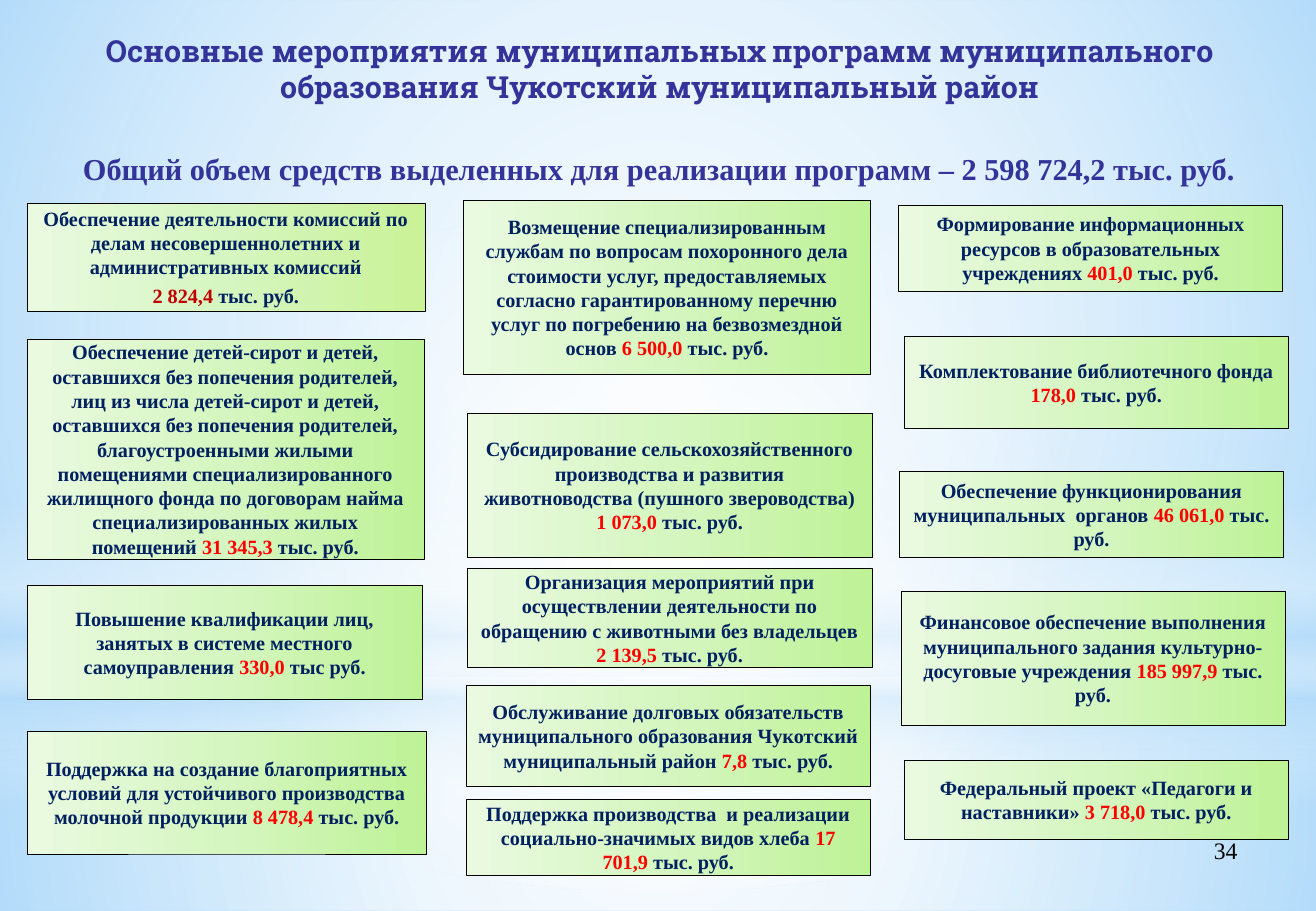
from lxml.etree import SubElement
from pptx import Presentation
from pptx.dml.color import RGBColor
from pptx.enum.shapes import MSO_SHAPE
from pptx.enum.text import MSO_ANCHOR, MSO_AUTO_SIZE, PP_ALIGN
from pptx.oxml.ns import qn
from pptx.util import Cm, Pt

WIDTH, HEIGHT = 27.53, 19.05
SERIF, SLAB = "Times New Roman", "Roboto Slab"
COLORS = {
    "sky": "B4DCFA", "white": "FFFFFF", "black": "000000",
    "head": "333399", "navy": "002060", "red": "FF0000", "dark": "C00000",
    "pale": "EAFAE0", "mint": "D5F6C0", "green": "BEF297", "lime": "CAF297",
}

# Left, top, width, height in cm; then label, sum, unit
CARDS = [
    # Left column
    (0.56, 7.09, 8.31, 4.6, "Обеспечение детей-сирот и детей, оставшихся без попечения родителей, "
     "лиц из числа детей-сирот и детей, оставшихся без попечения родителей, благоустроенными жилыми "
     "помещениями специализированного жилищного фонда по договорам найма специализированных жилых "
     "помещений ", "31 345,3", " тыс. руб."),
    (0.56, 12.24, 8.28, 2.39, "Повышение квалификации лиц, занятых в системе местного "
     "самоуправления ", "330,0", " тыс руб."),
    (0.58, 15.29, 8.33, 2.57, "Поддержка на создание благоприятных условий для устойчивого "
     "производства молочной продукции ", "8 478,4", " тыс. руб."),
    # Middle column
    (9.7, 4.19, 8.51, 3.63, "Возмещение специализированным службам по вопросам похоронного дела "
     "стоимости услуг, предоставляемых согласно гарантированному перечню услуг по погребению на "
     "безвозмездной основ ", "6 500,0", " тыс. руб."),
    (9.78, 8.64, 8.46, 3.02, "Субсидирование сельскохозяйственного производства и развития "
     "животноводства (пушного звероводства) ", "1 073,0", " тыс. руб."),
    (9.78, 11.89, 8.46, 2.06, "Организация мероприятий при осуществлении деятельности по обращению "
     "с животными без владельцев ", "2 139,5", " тыс. руб."),
    (9.75, 14.33, 8.46, 2.11, "Обслуживание долговых обязательств муниципального образования "
     "Чукотский муниципальный район ", "7,8", " тыс. руб."),
    (9.75, 16.71, 8.46, 1.6, "Поддержка производства  и реализации социально-значимых видов хлеба ",
     "17 701,9", " тыс. руб."),
    # Right column
    (18.8, 4.29, 8.03, 1.8, "Формирование информационных ресурсов в образовательных учреждениях ",
     "401,0", " тыс. руб."),
    (18.92, 7.04, 8.03, 1.91, "Комплектование библиотечного фонда ", "178,0", " тыс. руб."),
    (18.82, 9.86, 8.03, 1.8, "Обеспечение функционирования муниципальных  органов ",
     "46 061,0", " тыс. руб."),
    (18.85, 12.37, 8.03, 2.79, "Финансовое обеспечение выполнения муниципального задания "
     "культурно-досуговые учреждения ", "185 997,9", " тыс. руб."),
    (18.92, 15.9, 8.03, 1.65, "Федеральный проект «Педагоги и наставники» ", "3 718,0", " тыс. руб."),
]


def color(name):
    return RGBColor.from_string(COLORS[name])


def blend(shape, stops, angle=None):
    """Fill with (place, colour, opacity) stops: linear, or round without an angle."""
    shape.fill.background()
    props = shape.element.spPr
    grad = props.makeelement(qn("a:gradFill"), {"rotWithShape": "1"})
    group = SubElement(grad, qn("a:gsLst"))
    for place, name, alpha in stops:
        stop = SubElement(group, qn("a:gs"), pos=str(place * 1000))
        tint = SubElement(stop, qn("a:srgbClr"), val=COLORS[name])
        if alpha < 100:
            SubElement(tint, qn("a:alpha"), val=str(alpha * 1000))
    if angle is None:
        route = SubElement(grad, qn("a:path"), {"path": "circle"})
        SubElement(route, qn("a:fillToRect"), dict.fromkeys("ltrb", "50000"))
    else:
        SubElement(grad, qn("a:lin"), ang=str(angle * 60000), scaled="0")
    props.replace(props.find(qn("a:noFill")), grad)


def add_form(slide, kind, box, stops, angle=None):
    shape = slide.shapes.add_shape(kind, *map(Cm, box))
    shape.shadow.inherit = False
    shape.line.fill.background()
    blend(shape, stops, angle)
    return shape


def style(run, size, tone, face=SERIF, bold=True):
    font = run.font
    font.name, font.size, font.bold = face, Pt(size), bold
    font.color.rgb = color(tone)


def add_label(slide, box, text, size, tone, align, bold, wrap):
    frame = slide.shapes.add_textbox(*map(Cm, box)).text_frame
    frame.word_wrap = wrap
    frame.text = text
    para = frame.paragraphs[0]
    para.alignment = align
    style(para.runs[0], size, tone, bold=bold)
    return frame


def add_card(slide, box, lines, edge="green"):
    """Draw a card; lines holds paragraphs of (text, tone) pairs."""
    stops = [(0, edge, 100), (50, "mint", 100), (100, "pale", 100)]
    card = add_form(slide, MSO_SHAPE.RECTANGLE, box, stops, 180)
    card.line.color.rgb = color("black")
    card.line.width = Pt(0.25)
    frame = card.text_frame
    frame.word_wrap = True
    frame.vertical_anchor = MSO_ANCHOR.MIDDLE
    for index, parts in enumerate(lines):
        para = frame.add_paragraph() if index else frame.paragraphs[0]
        para.alignment = PP_ALIGN.CENTER
        para.space_before = Pt(2.4 if index else 0)
        for text, tone in parts:
            run = para.add_run()
            run.text = text
            style(run, 12, tone)


def add_sky(slide):
    slide.background.fill.solid()
    slide.background.fill.fore_color.rgb = color("sky")
    rect = MSO_SHAPE.RECTANGLE
    add_form(slide, rect, (0, 14.17, WIDTH, 4.88),
             [(0, "white", 91), (37, "white", 76), (100, "sky", 79)])
    add_form(slide, rect, (0, 0, WIDTH, 14.17),
             [(0, "white", 89), (48, "white", 62), (100, "sky", 79)])
    add_form(slide, rect, (0, 10.46, WIDTH, 6.35),
             [(0, "white", 0), (29, "white", 30), (45, "sky", 40),
              (55, "white", 26), (65, "sky", 60), (100, "white", 0)], 90)
    add_form(slide, MSO_SHAPE.OVAL, (0, 4.45, WIDTH, 14.17),
             [(0, "white", 100), (56, "white", 0)])


def set_title(slide, text):
    title = slide.shapes.title
    title.left, title.top, title.width, title.height = map(Cm, (1.42, 0.71, 24.77, 1.45))
    frame = title.text_frame
    frame.text = text
    frame.auto_size = MSO_AUTO_SIZE.NONE
    frame.word_wrap = True
    frame.vertical_anchor = MSO_ANCHOR.MIDDLE
    frame.margin_left = frame.margin_right = frame.margin_top = frame.margin_bottom = 0
    para = frame.paragraphs[0]
    para.alignment = PP_ALIGN.CENTER
    style(para.runs[0], 18, "head", SLAB)
    # Lift the title above the backdrop
    title.element.getparent().append(title.element)


def main():
    deck = Presentation()
    deck.slide_width, deck.slide_height = Cm(WIDTH), Cm(HEIGHT)
    slide = deck.slides.add_slide(deck.slide_layouts[5])

    # Backdrop and headings
    add_sky(slide)
    set_title(slide, "Основные мероприятия муниципальных программ муниципального "
                     "образования Чукотский муниципальный район")
    total = add_label(slide, (0.99, 3.07, 25.6, 0.91),
                      "Общий объем средств выделенных для реализации программ – 2 598 724,2 тыс. руб.",
                      18, "head", PP_ALIGN.CENTER, True, False)
    total.vertical_anchor = MSO_ANCHOR.MIDDLE
    add_label(slide, (19.71, 17.35, 6.43, 1.32), "34", 14, "black", PP_ALIGN.RIGHT, False, True)

    # Programme cards
    add_card(slide, (0.56, 4.24, 8.33, 2.26),
             [[("Обеспечение деятельности комиссий по делам несовершеннолетних и "
                "административных комиссий", "navy")],
              [("2 824,4", "dark"), (" тыс. руб.", "navy")]], "lime")
    for *box, label, amount, unit in CARDS:
        add_card(slide, box, [[(label, "navy"), (amount, "red"), (unit, "navy")]])

    deck.save("out.pptx")


if __name__ == "__main__":
    main()
